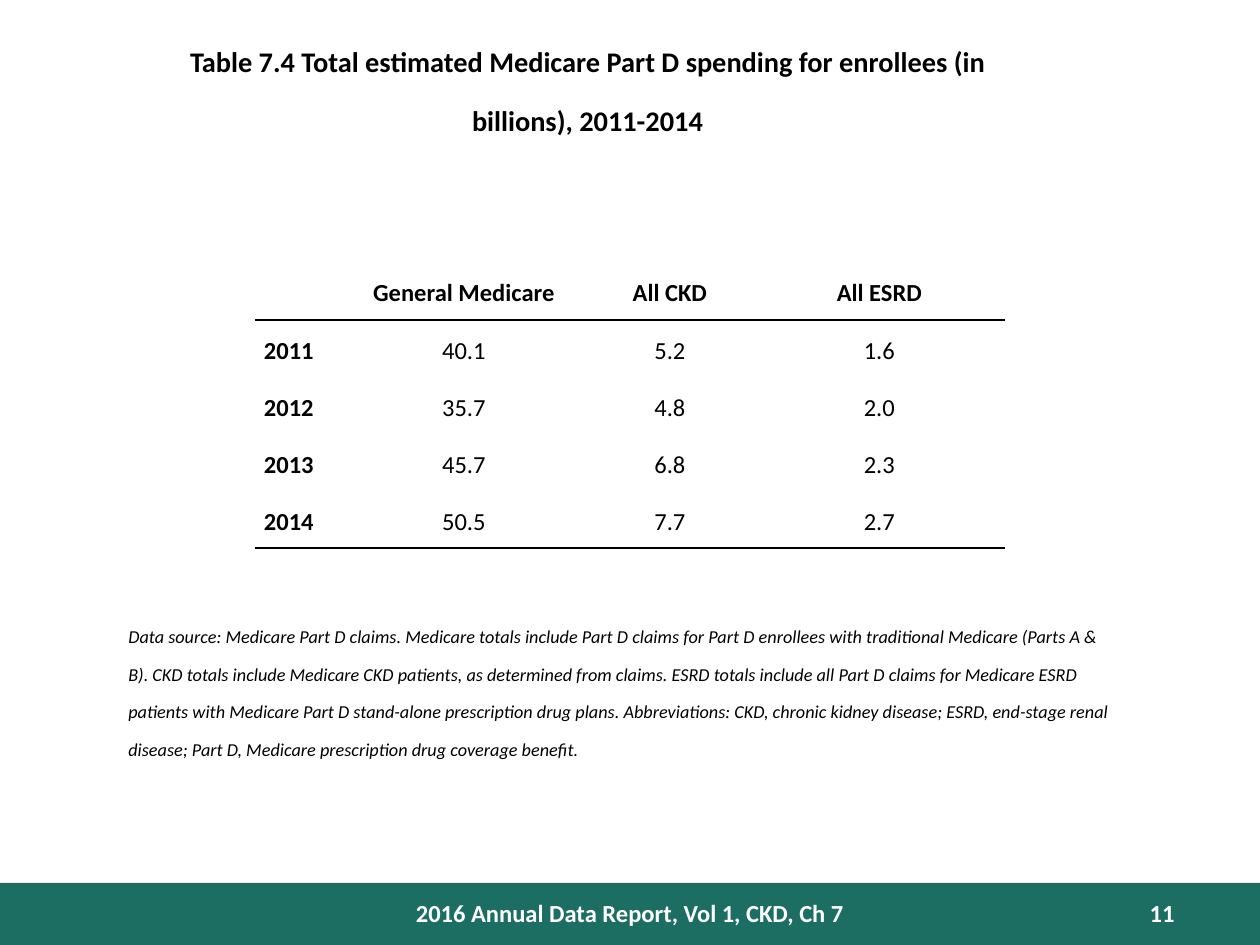
from lxml import etree
from pptx import Presentation
from pptx.dml.color import RGBColor
from pptx.enum.shapes import MSO_SHAPE
from pptx.enum.text import MSO_ANCHOR, MSO_AUTO_SIZE, PP_ALIGN
from pptx.oxml.ns import qn
from pptx.util import Emu, Pt

LEFT, CENTER, RIGHT = PP_ALIGN.LEFT, PP_ALIGN.CENTER, PP_ALIGN.RIGHT
TOP, MIDDLE = MSO_ANCHOR.TOP, MSO_ANCHOR.MIDDLE
GROW = MSO_AUTO_SIZE.SHAPE_TO_FIT_TEXT
RECTANGLE = MSO_SHAPE.RECTANGLE
TITLE_ONLY = 5
EMU_PER_PX = 914400 / 126
BLACK, WHITE, GREEN = "000000", "FFFFFF", "1C6E62"

TITLE = ("Table 7.4 Total estimated Medicare Part D spending for enrollees "
         "(in billions), 2011-2014")
SOURCE_NOTE = (
    "Data source: Medicare Part D claims. Medicare totals include Part D claims "
    "for Part D enrollees with traditional Medicare (Parts A & B). CKD totals "
    "include Medicare CKD patients, as determined from claims. ESRD totals include "
    "all Part D claims for Medicare ESRD patients with Medicare Part D stand-alone "
    "prescription drug plans. Abbreviations: CKD, chronic kidney disease; ESRD, "
    "end-stage renal disease; Part D, Medicare prescription drug coverage benefit.")
SPENDING = [
    ["", "General Medicare", "All CKD", "All ESRD"],
    ["2011", "40.1", "5.2", "1.6"],
    ["2012", "35.7", "4.8", "2.0"],
    ["2013", "45.7", "6.8", "2.3"],
    ["2014", "50.5", "7.7", "2.7"],
]
COLUMN_WIDTHS = [87, 244, 168, 251]
ROW_HEIGHTS = [58, 57, 57, 57, 57]


def px(length):
    """Turn pixels into EMU."""
    return Emu(round(length * EMU_PER_PX))


def color(value):
    """Turn a hex string into a colour."""
    return RGBColor.from_string(value)


def write(frame, text, align=LEFT, hex_color=BLACK, size=14, raised=False, **style):
    """Write one formatted paragraph into a text frame."""
    paragraph = frame.paragraphs[0]
    paragraph.alignment = align
    run = paragraph.add_run()
    run.text = text
    settings = {"name": "Calibri", "size": Pt(size), **style}
    for attribute, value in settings.items():
        setattr(run.font, attribute, value)
    run.font.color.rgb = color(hex_color)
    if raised:
        run.font._element.set("baseline", "30000")
    return paragraph


def add_title(slide, left, top, width, height):
    """Place the title in its placeholder."""
    title = slide.shapes.title
    box = {"left": left, "top": top, "width": width, "height": height}
    for side, length in box.items():
        setattr(title, side, px(length))
    frame = title.text_frame
    frame.vertical_anchor, frame.auto_size = TOP, GROW
    write(frame, TITLE, CENTER, size=28, raised=True, bold=True)


def add_text(slide, left, top, width, height, text, **style):
    """Add a wrapped text box."""
    box = slide.shapes.add_textbox(px(left), px(top), px(width), px(height))
    box.text_frame.word_wrap = True
    write(box.text_frame, text, **style)
    return box


def set_borders(cell, ruled_sides):
    """Rule the given sides of a cell in black and clear the others."""
    properties = cell._tc.get_or_add_tcPr()
    for side in "LRTB":
        line = etree.SubElement(properties, qn(f"a:ln{side}"), w=str(Pt(1)))
        if side in ruled_sides:
            fill = etree.SubElement(line, qn("a:solidFill"))
            etree.SubElement(fill, qn("a:srgbClr"), val=BLACK)
        else:
            etree.SubElement(line, qn("a:noFill"))


def add_spending_table(slide, left, top):
    """Add the spending table with rules under its header and last row."""
    rows, columns = len(SPENDING), len(COLUMN_WIDTHS)
    table = slide.shapes.add_table(
        rows, columns, px(left), px(top),
        px(sum(COLUMN_WIDTHS)), px(sum(ROW_HEIGHTS))).table
    table.first_row = table.horz_banding = False
    for column, width in zip(table.columns, COLUMN_WIDTHS):
        column.width = px(width)
    for row, height in zip(table.rows, ROW_HEIGHTS):
        row.height = px(height)
    cell_format = {"vertical_anchor": MIDDLE, "margin_left": px(9),
                   "margin_right": px(9), "margin_top": 0, "margin_bottom": 0}
    ruled_sides = {0: "B", 1: "T", rows - 1: "B"}
    for r, values in enumerate(SPENDING):
        for c, value in enumerate(values):
            cell = table.cell(r, c)
            for attribute, setting in cell_format.items():
                setattr(cell, attribute, setting)
            set_borders(cell, ruled_sides.get(r, ""))
            cell.fill.background()
            paragraph = write(cell.text_frame, value, CENTER if c else LEFT,
                              bold=r == 0 or c == 0)
            paragraph.line_spacing = 1.15


def add_footer(slide, top, width, height):
    """Add the footer band with the report name and page number."""
    band = slide.shapes.add_shape(RECTANGLE, 0, px(top), px(width), px(height))
    band.shadow.inherit = False
    band.fill.solid()
    band.fill.fore_color.rgb = color(GREEN)
    band.line.fill.background()
    style = {"hex_color": WHITE, "bold": True}
    add_text(slide, 378, top + 9, 504, 42, "2016 Annual Data Report, Vol 1, CKD, Ch 7",
             align=CENTER, **style)
    add_text(slide, 1061, top + 9, 126, 38, "11", align=RIGHT, **style)


def main():
    """Build the slide and save it."""
    deck = Presentation()
    deck.slide_width, deck.slide_height = px(1260), px(945)
    slide = deck.slides.add_slide(deck.slide_layouts[TITLE_ONLY])
    add_footer(slide, 883, 1260, 62)
    add_title(slide, 136, 32, 903, 92)
    add_spending_table(slide, 255, 262)
    note = add_text(slide, 116, 615, 1018, 115, SOURCE_NOTE, size=18, raised=True,
                    italic=True)
    note.text_frame.auto_size = GROW
    deck.save("out.pptx")


if __name__ == "__main__":
    main()
